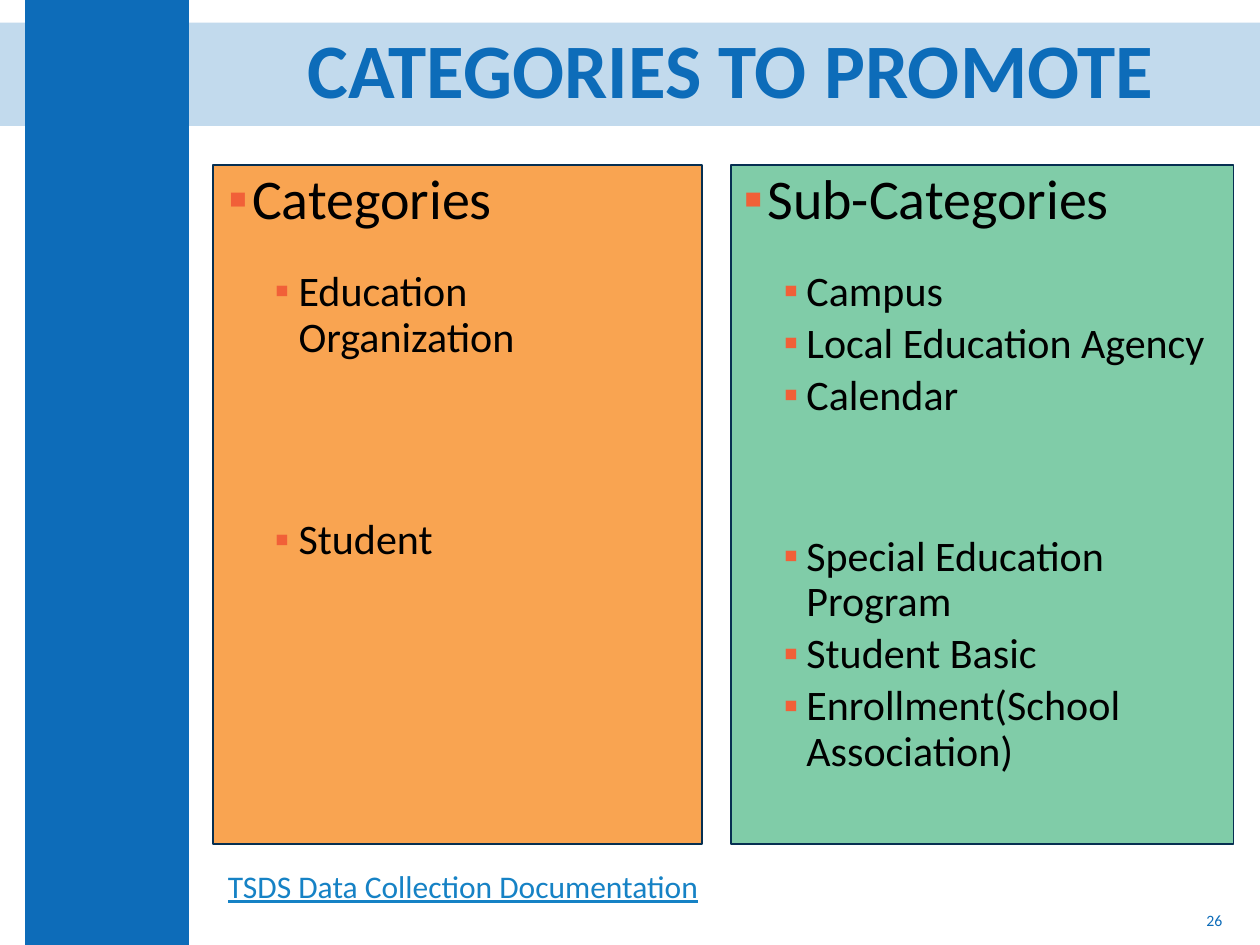
import pptx
import pptx.util
import pptx.dml.color
import pptx.enum.shapes
import pptx.enum.text
import pptx.oxml
import pptx.oxml.ns

Inches, Pt = pptx.util.Inches, pptx.util.Pt
ALIGN = pptx.enum.text.PP_ALIGN
ANCHOR = pptx.enum.text.MSO_ANCHOR
FONT = "Calibri"
HUES = {"blue": "0D6CB9", "green": "80CCA8", "orange": "F9A451", "navy": "062F51",
        "bullet": "F16038", "text": "000000", "link": "1682C5"}

# Each item: text, space before in points
LEFT = [("Education Organization", 22), ("Student", 90)]
RIGHT = [("Campus", 22), ("Local Education Agency", 3.8), ("Calendar", 3.8),
         ("Special Education Program", 66), ("Student Basic", 3.8),
         ("Enrollment(School Association)", 3.8)]


def rgb(hue):
    return pptx.dml.color.RGBColor.from_string(HUES[hue])


def node(parent, tag, **attrs):
    item = pptx.oxml.parse_xml(f"<a:{tag} {pptx.oxml.ns.nsdecls('a')}/>")
    for key, val in attrs.items():
        item.set(key, str(val))
    parent.append(item)
    return item


def add_rect(slide, area, hue, line=None, alpha=None):
    kind = pptx.enum.shapes.MSO_SHAPE.RECTANGLE
    rect = slide.shapes.add_shape(kind, *map(Inches, area))
    rect.shadow.inherit = False
    rect.fill.solid()
    rect.fill.fore_color.rgb = rgb(hue)
    if alpha:
        color = rect.element.spPr.find(".//" + pptx.oxml.ns.qn("a:srgbClr"))
        node(color, "alpha", val=alpha * 1000)
    if line:
        rect.line.color.rgb = rgb(line)
        rect.line.width = Pt(1)
    else:
        rect.line.fill.background()


def style(para, size, hue, bold=False, under=None):
    font = para.font
    font.name, font.size, font.bold = FONT, Pt(size), bold
    font.underline = under
    font.color.rgb = rgb(hue)


def place(shape, area):
    shape.left, shape.top, shape.width, shape.height = map(Inches, area)
    # Bring the placeholder in front of the panels
    shape.element.getparent().append(shape.element)
    frame = shape.text_frame
    frame.auto_size = pptx.enum.text.MSO_AUTO_SIZE.NONE
    frame.word_wrap = True
    return frame


def add_title(slide, text, area):
    frame = place(slide.shapes.title, area)
    frame.vertical_anchor = ANCHOR.MIDDLE
    para = frame.paragraphs[0]
    para.text = text
    para.alignment = ALIGN.CENTER
    para.line_spacing = 0.9
    style(para, 44, "blue", bold=True)


def add_point(para, text, size, left, hang, gap, level=0):
    para.text = text
    para.level = level
    para.line_spacing = 0.9
    para.space_before = Pt(gap)
    props = para._p.get_or_add_pPr()
    props.set("marL", str(Inches(left)))
    props.set("indent", str(-Inches(hang)))
    node(node(props, "buClr"), "srgbClr", val=HUES["bullet"])
    node(props, "buFont", typeface="Arial")
    node(props, "buChar", char="▪")
    style(para, size, "text")


def add_list(shape, area, head, items, left, hang):
    frame = place(shape, area)
    frame.vertical_anchor = ANCHOR.TOP
    add_point(frame.paragraphs[0], head, 32, 0.19, 0.19, 0)
    for text, gap in items:
        add_point(frame.add_paragraph(), text, 24, left, hang, gap, level=1)


def add_text(slide, text, area, size, hue, align=ALIGN.LEFT,
             anchor=ANCHOR.TOP, under=None):
    frame = slide.shapes.add_textbox(*map(Inches, area)).text_frame
    frame.word_wrap = True
    frame.vertical_anchor = anchor
    para = frame.paragraphs[0]
    para.text = text
    para.alignment = align
    style(para, size, hue, under=under)


def main():
    deck = pptx.Presentation()
    deck.slide_width, deck.slide_height = Inches(10), Inches(7.5)
    slide = deck.slides.add_slide(deck.slide_layouts[3])

    # Bands
    add_rect(slide, (0, 0.18, 10, 0.82), "blue", alpha=25)
    add_rect(slide, (0.2, 0, 1.3, 7.5), "blue")
    add_title(slide, "CATEGORIES TO PROMOTE", (1.9, 0.17, 7.8, 0.82))

    # Panels and lists
    right = (5.8, 1.31, 3.99, 5.39)
    add_rect(slide, right, "green", line="navy")
    add_rect(slide, (1.69, 1.31, 3.88, 5.39), "orange", line="navy")
    holders = slide.placeholders
    add_list(holders[1], (1.71, 1.31, 3.86, 5.09), "Categories", LEFT, 0.56, 0.19)
    add_list(holders[2], right, "Sub-Categories", RIGHT, 0.5, 0.18)

    # Source and page number
    add_text(slide, "TSDS Data Collection Documentation", (1.71, 6.83, 4, 0.4),
             18, "link", under=True)
    add_text(slide, "26", (7.55, 7.1, 2.25, 0.4), 9, "blue",
             align=ALIGN.RIGHT, anchor=ANCHOR.MIDDLE)

    deck.save("out.pptx")


if __name__ == "__main__":
    main()
